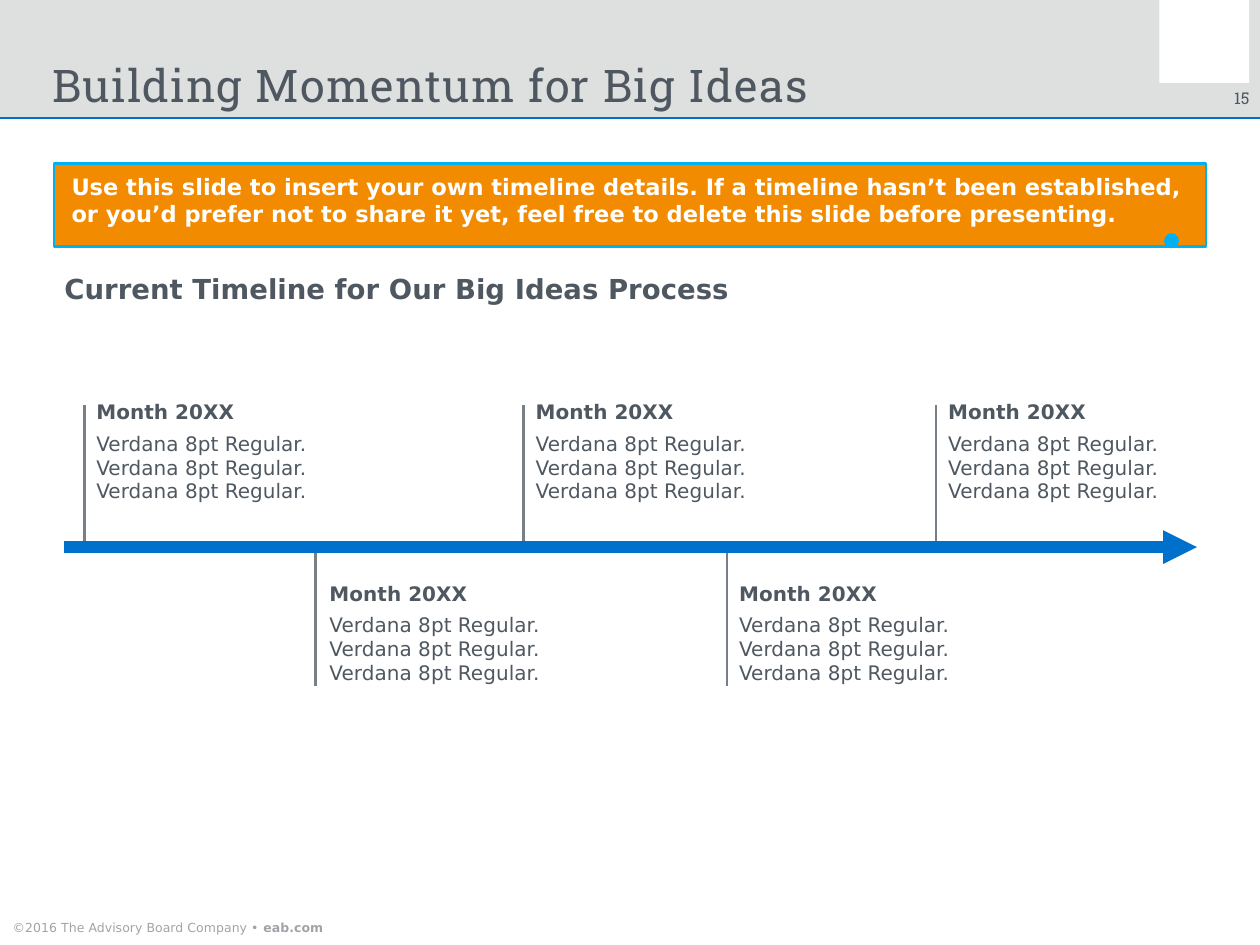
from lxml import etree
from pptx import Presentation, util as u
from pptx.dml.color import RGBColor
from pptx.enum import shapes, text
from pptx.oxml.ns import qn

HUES = {
    "band": "DEE0E0", "white": "FFFFFF", "ink": "4F5861", "pale": "A0A4A9",
    "blue": "0070CD", "stem": "797F86", "note": "F28B00", "edge": "00B0F0",
}
SANS, SLAB = "DejaVu Sans", "Roboto Slab"
TOP, LEFT, RIGHT = text.MSO_ANCHOR.TOP, text.PP_ALIGN.LEFT, text.PP_ALIGN.RIGHT
LOW = text.MSO_ANCHOR.BOTTOM
KIND = shapes.MSO_SHAPE


def hue(name):
    return RGBColor.from_string(HUES[name])


def place(box):
    return [u.Cm(n) for n in box]


def assign(item, values):
    for key, value in values.items():
        setattr(item, key, value)


def write(shape, paras, size, color="ink", face=SANS, anchor=TOP,
          align=LEFT, pads=(0, 0, 0, 0), gap=0, track=0, lead=None):
    """Fill a shape with paragraphs, each a list of (words, bold) runs."""
    frame = shape.text_frame
    sides = ("margin_left", "margin_top", "margin_right", "margin_bottom")
    assign(frame, {"word_wrap": True, "vertical_anchor": anchor,
                   **dict(zip(sides, place(pads)))})
    for i, runs in enumerate(paras):
        para = frame.add_paragraph() if i else frame.paragraphs[0]
        para.alignment = align
        if i and gap:
            para.space_before = u.Pt(gap)
        if lead:
            para.line_spacing = u.Pt(lead)
        for words, bold in runs:
            run = para.add_run()
            run.text = words
            assign(run.font, {"name": face, "size": u.Pt(size), "bold": bold})
            run.font.color.rgb = hue(color)
            if track:
                run.font._element.set("spc", str(track))


def label(slide, box, paras, size, **style):
    write(slide.shapes.add_textbox(*place(box)), paras, size, **style)


def block(slide, box, fill, kind=KIND.RECTANGLE):
    shape = slide.shapes.add_shape(kind, *place(box))
    shape.shadow.inherit = False
    shape.fill.solid()
    shape.fill.fore_color.rgb = hue(fill)
    shape.line.fill.background()
    return shape


def stroke(shape, color, width, tail=None):
    shape.line.color.rgb = hue(color)
    shape.line.width = u.Pt(width)
    if tail:
        ln = shape.line._get_or_add_ln()
        etree.SubElement(ln, qn("a:tailEnd"), type=tail)


def rule(slide, ends, color, width, tail=None):
    line = slide.shapes.add_connector(shapes.MSO_CONNECTOR.STRAIGHT, *place(ends))
    stroke(line, color, width, tail)
    etree.SubElement(line._element.spPr, qn("a:effectLst"))


def event(slide, stem, left, above):
    """One date on the timeline, above or below the arrow."""
    start, end, top = (5.72, 7.72, 5.64) if above else (7.8, 9.68, 8.2)
    rule(slide, (stem, start, stem, end), "stem", 1)
    body = " ".join(["Verdana 8pt Regular."] * 3)
    label(slide, (left, top, 3.35, 1.47),
          [[("Month 20XX", True)], [(body, False)]], 8, gap=3)


def header(slide):
    block(slide, (0, 0, 17.78, 1.67), "band")
    block(slide, (16.36, 0, 1.27, 1.17), "white")
    rule(slide, (0, 1.67, 17.78, 1.67), "blue", 0.75)
    label(slide, (17.12, 1.24, 0.51, 0.28), [[("15", False)]], 6.5,
          face=SLAB, align=RIGHT)
    label(slide, (0.74, 0.86, 15.24, 0.71),
          [[("Building Momentum for Big Ideas", False)]], 18,
          face=SLAB, anchor=LOW, track=50, lead=20)


def notice(slide):
    box = block(slide, (0.76, 2.31, 16.26, 1.17), "note", KIND.LINE_CALLOUT_1)
    for i, ratio in enumerate((0.91, 0.97, 0.93, 0.97)):
        box.adjustments[i] = ratio
    stroke(box, "edge", 1, "oval")
    words = ("Use this slide to insert your own timeline details. If a timeline "
             "hasn’t been established, or you’d prefer not to share it yet, "
             "feel free to delete this slide before presenting.")
    write(box, [[(words, True)]], 9, "white", pads=(0.25, 0.13, 0.25, 0.13))


def main():
    deck = Presentation()
    assign(deck, {"slide_width": u.Cm(17.78), "slide_height": u.Cm(13.335)})
    slide = deck.slides.add_slide(deck.slide_layouts[6])

    # Header band, title and page number
    header(slide)

    # Notice and heading
    notice(slide)
    label(slide, (0.91, 3.84, 12.75, 0.48),
          [[("Current Timeline for Our Big Ideas Process", True)]], 11)

    # Timeline: dates alternate above and below the arrow
    marks = ((1.19, 1.36), (4.45, 4.65), (7.39, 7.56), (10.26, 10.43), (13.21, 13.38))
    for i, (stem, left) in enumerate(marks):
        event(slide, stem, left, i % 2 == 0)
    rule(slide, (0.91, 7.72, 16.89, 7.72), "blue", 4.5, "triangle")

    # Footer
    label(slide, (0, 13, 5.87, 0.33),
          [[("©2016 The Advisory Board Company • ", False), ("eab.com", True)]],
          5, color="pale", anchor=LOW, pads=(0.18, 0, 0, 0.13))

    deck.save("out.pptx")


if __name__ == "__main__":
    main()
